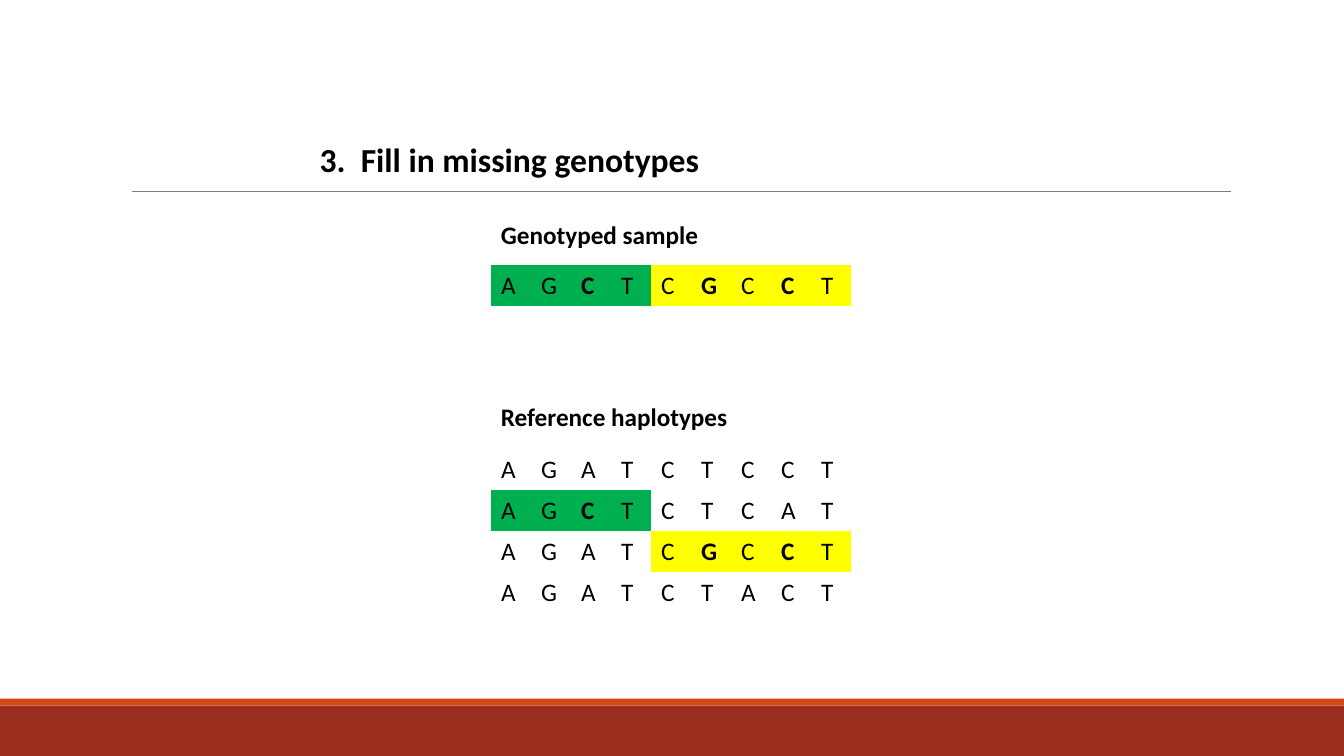
from pptx import Presentation
from pptx.dml.color import RGBColor
from pptx.enum.shapes import MSO_CONNECTOR as Connector, MSO_SHAPE as Preset
from pptx.enum.text import MSO_ANCHOR as Anchor, MSO_AUTO_SIZE as AutoSize, PP_ALIGN as Align
from pptx.oxml.ns import qn
from pptx.oxml.xmlchemy import OxmlElement
from pptx.util import Inches, Pt

BLACK, GREY, RUST, ORANGE = "000000", "808080", "9B2D1F", "D34817"
MATCH_FILLS = {"g": "00B050", "y": "FFFF00"}
IMPUTED_SITES = {2, 5, 7}
NO_STYLE_NO_GRID = "{2D5ABB26-0587-4C30-8999-92F81FD0307C}"
TABLE_LEFT, SITE_WIDTH, ROW_HEIGHT = 36.53, 2.98, 5.4


def colour(value):
    """Turn a hex string into a colour."""
    return RGBColor.from_string(value)


class GenotypePage:
    """Draws on one slide, with lengths in percent of its width and height."""

    font_name = "Calibri"

    def __init__(self, deck):
        """Add a page that has only a title placeholder."""
        self.deck = deck
        self.page = deck.slides.add_slide(deck.slide_layouts[5])

    def place(self, left, top, width, height):
        """Convert a percent box to slide lengths."""
        columns, rows = self.deck.slide_width / 100, self.deck.slide_height / 100
        return [round(n) for n in (left * columns, top * rows, width * columns, height * rows)]

    def style(self, para, size, bold):
        """Set the font of a paragraph."""
        para.alignment = Align.LEFT
        font = para.font
        font.name, font.size, font.bold = self.font_name, Pt(size), bold
        font.color.rgb = colour(BLACK)

    def bar(self, top, height, fill):
        """Draw a full-width bar."""
        box = self.page.shapes.add_shape(Preset.RECTANGLE, *self.place(0, top, 100, height))
        box.shadow.inherit = False
        box.fill.solid()
        box.fill.fore_color.rgb = colour(fill)
        box.line.fill.background()

    def rule(self, left, right, top):
        """Draw a thin horizontal line."""
        x, y, width, _ = self.place(left, top, right - left, 0)
        line = self.page.shapes.add_connector(Connector.STRAIGHT, x, y, x + width, y)
        line.line.color.rgb = colour(GREY)
        line.line.width = Pt(0.5)
        line._element.spPr.append(OxmlElement("a:effectLst"))

    def label(self, box, text, size):
        """Put one bold line into a box."""
        frame = box.text_frame
        frame.text = text
        frame.word_wrap = False
        frame.auto_size = AutoSize.SHAPE_TO_FIT_TEXT
        frame.vertical_anchor = Anchor.TOP
        self.style(frame.paragraphs[0], size, True)

    def title(self, text, left, top, width, height):
        """Move and fill the title placeholder."""
        box = self.page.shapes.title
        box.left, box.top, box.width, box.height = self.place(left, top, width, height)
        self.label(box, text, 24)

    def heading(self, text, top, width):
        """Add a table heading."""
        box = self.page.shapes.add_textbox(*self.place(TABLE_LEFT, top, width, 5.33))
        self.label(box, text, 18)

    def haplotypes(self, top, rows):
        """Draw a table from pairs of bases and match marks, one letter a site."""
        sites = len(rows[0][0])
        area = self.place(TABLE_LEFT, top, sites * SITE_WIDTH, len(rows) * ROW_HEIGHT)
        table = self.page.shapes.add_table(len(rows), sites, *area).table
        table.first_row = table.horz_banding = False
        table._tbl.tblPr.find(qn("a:tableStyleId")).text = NO_STYLE_NO_GRID
        for row, (bases, marks) in enumerate(rows):
            for site, (base, mark) in enumerate(zip(bases, marks)):
                cell = table.cell(row, site)
                cell.text = base
                matched = mark in MATCH_FILLS
                self.style(cell.text_frame.paragraphs[0], 18, matched and site in IMPUTED_SITES)
                if matched:
                    cell.fill.solid()
                    cell.fill.fore_color.rgb = colour(MATCH_FILLS[mark])
                else:
                    cell.fill.background()


def main():
    """Build and save the deck."""
    deck = Presentation()
    deck.slide_width, deck.slide_height = Inches(13.33), Inches(7.5)
    page = GenotypePage(deck)
    page.bar(93.33, 6.67, RUST)
    page.bar(92.4, 0.93, ORANGE)
    page.rule(9.83, 91.58, 25.33)
    page.title("3.  Fill in missing genotypes", 23.03, 17.73, 30, 6.67)
    page.heading("Genotyped sample", 28.4, 16.5)
    page.haplotypes(35.07, [("AGCTCGCCT", "ggggyyyyy")])
    page.heading("Reference haplotypes", 52.4, 18.45)
    page.haplotypes(59.47, [
        ("AGATCTCCT", "---------"),
        ("AGCTCTCAT", "gggg-----"),
        ("AGATCGCCT", "----yyyyy"),
        ("AGATCTACT", "---------"),
    ])
    deck.save("out.pptx")


if __name__ == "__main__":
    main()
